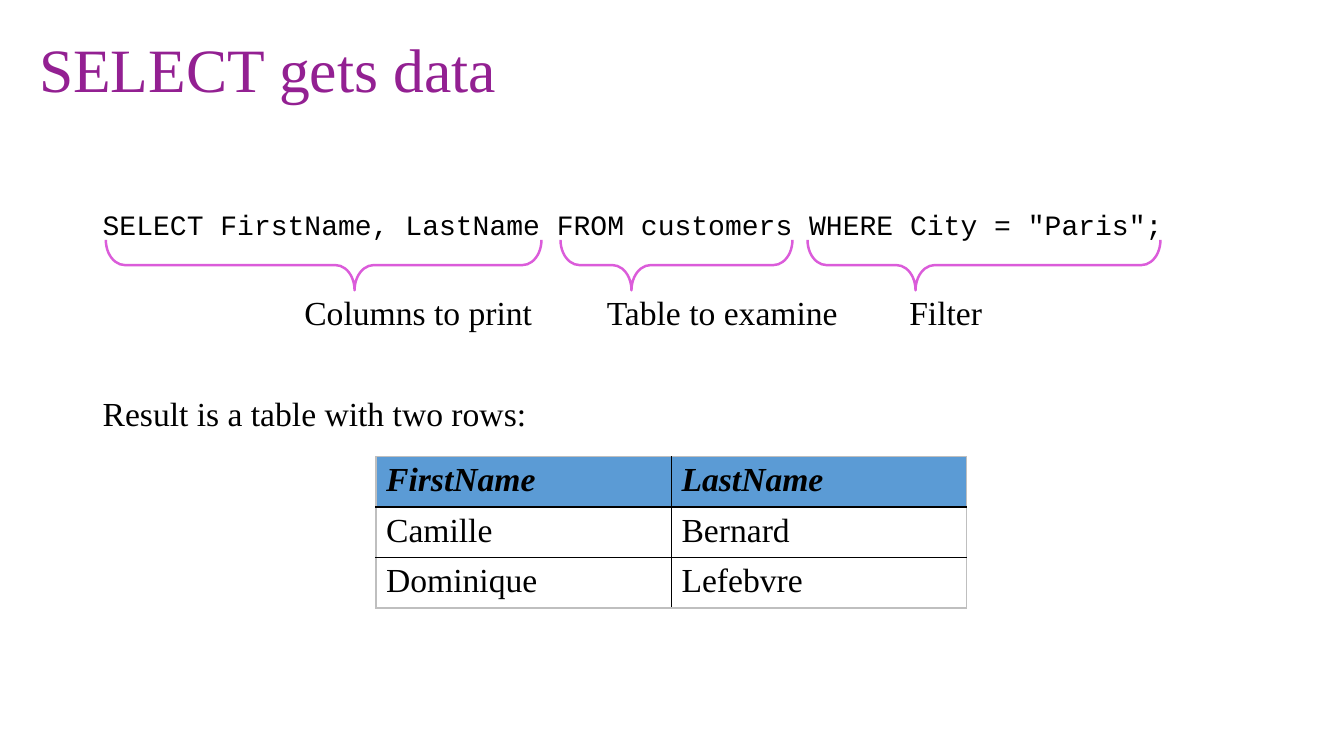
"""Build a slide that explains the parts of a SQL SELECT statement."""
from dataclasses import dataclass

import lxml.etree
import pptx
import pptx.dml.color
import pptx.enum.shapes
import pptx.oxml.ns
import pptx.slide
import pptx.table
import pptx.util

Inches = pptx.util.Inches
RGBColor = pptx.dml.color.RGBColor

PURPLE = RGBColor(0x93, 0x20, 0x92)
PINK = RGBColor(0xDB, 0x5C, 0xDA)
BLUE = RGBColor(0x5B, 0x9B, 0xD5)
BLACK = RGBColor(0, 0, 0)
GREY = RGBColor(0xBF, 0xBF, 0xBF)
SERIF = "Times New Roman"
MONO = "Courier New"


@dataclass
class Line:
    text: str
    left: float
    top: float
    width: float
    height: float = 0.5
    size: int = 24
    font: str = SERIF
    color: RGBColor = BLACK


@dataclass
class Brace:
    left: float
    width: float
    tip: float


LINES = [
    Line("SELECT gets data", 0.29, 0.26, 12.73, 0.8, 44, SERIF, PURPLE),
    Line('SELECT FirstName, LastName FROM customers WHERE City = "Paris";',
         0.92, 2.01, 11.5, size=20, font=MONO),
    Line("Columns to print", 2.92, 2.85, 2.8),
    Line("Table to examine", 5.92, 2.85, 2.8),
    Line("Filter", 8.92, 2.85, 2.8),
    Line("Result is a table with two rows:", 0.92, 3.85, 11.5),
]
BRACES = [Brace(1.05, 4.32, 0.571), Brace(5.56, 2.3, 0.306), Brace(8.01, 3.5, 0.306)]
BRACE_TOP, BRACE_DEPTH = 2.38, 0.5
CUSTOMERS = [("FirstName", "LastName"), ("Camille", "Bernard"), ("Dominique", "Lefebvre")]
COLUMN_WIDTH, ROW_HEIGHT = 2.93, 0.46


def set_font(font: pptx.text.text.Font, color: RGBColor, **formats: object) -> None:
    """Apply a color and the given format values to a font."""
    for attribute, value in formats.items():
        setattr(font, attribute, value)
    font.color.rgb = color


def add_line(slide: pptx.slide.Slide, line: Line) -> None:
    """Add one line of text."""
    frame = slide.shapes.add_textbox(
        Inches(line.left), Inches(line.top), Inches(line.width), Inches(line.height)
    ).text_frame
    frame.word_wrap = True
    run = frame.paragraphs[0].add_run()
    run.text = line.text
    set_font(run.font, line.color, name=line.font, size=pptx.util.Pt(line.size))


def add_brace(slide: pptx.slide.Slide, brace: Brace) -> None:
    """Add a brace that points down, turned about its centre."""
    shift = (brace.width - BRACE_DEPTH) / 2
    shape = slide.shapes.add_shape(
        pptx.enum.shapes.MSO_SHAPE.LEFT_BRACE,
        Inches(brace.left + shift), Inches(BRACE_TOP - shift),
        Inches(BRACE_DEPTH), Inches(brace.width),
    )
    shape.rotation = 270
    shape.adjustments[0] = 0.377
    shape.adjustments[1] = brace.tip
    shape.shadow.inherit = False
    shape.fill.background()
    shape.line.color.rgb = PINK
    shape.line.width = pptx.util.Pt(1.75)


def set_borders(cell: pptx.table._Cell, outer: dict[str, bool]) -> None:
    """Draw grey outer and black inner borders on a cell."""
    properties = cell._tc.get_or_add_tcPr()
    for position, (side, is_outer) in enumerate(outer.items()):
        border = lxml.etree.Element(pptx.oxml.ns.qn(f"a:{side}"), w="12700")
        fill = lxml.etree.SubElement(border, pptx.oxml.ns.qn("a:solidFill"))
        lxml.etree.SubElement(
            fill, pptx.oxml.ns.qn("a:srgbClr"), val=str(GREY if is_outer else BLACK)
        )
        properties.insert(position, border)


def add_customers(slide: pptx.slide.Slide) -> None:
    """Add the result table."""
    rows, columns = len(CUSTOMERS), len(CUSTOMERS[0])
    table = slide.shapes.add_table(
        rows, columns, Inches(3.73), Inches(4.53),
        Inches(COLUMN_WIDTH * columns), Inches(ROW_HEIGHT * rows),
    ).table
    table.horz_banding = False
    table.first_row = False
    for r, customer in enumerate(CUSTOMERS):
        for c, name in enumerate(customer):
            cell = table.cell(r, c)
            heading = r == 0
            if heading:
                cell.fill.solid()
                cell.fill.fore_color.rgb = BLUE
            else:
                cell.fill.background()
            run = cell.text_frame.paragraphs[0].add_run()
            run.text = name
            set_font(run.font, BLACK, name=SERIF, size=pptx.util.Pt(24),
                     bold=heading, italic=heading)
            set_borders(cell, {"lnL": c == 0, "lnR": c == columns - 1,
                               "lnT": r == 0, "lnB": r == rows - 1})


def main() -> None:
    """Build and save the slide."""
    presentation = pptx.Presentation()
    presentation.slide_width = Inches(13.33)
    presentation.slide_height = Inches(7.5)
    slide = presentation.slides.add_slide(presentation.slide_layouts[6])
    for line in LINES:
        add_line(slide, line)
    for brace in BRACES:
        add_brace(slide, brace)
    add_customers(slide)
    presentation.save("out.pptx")


if __name__ == "__main__":
    main()
